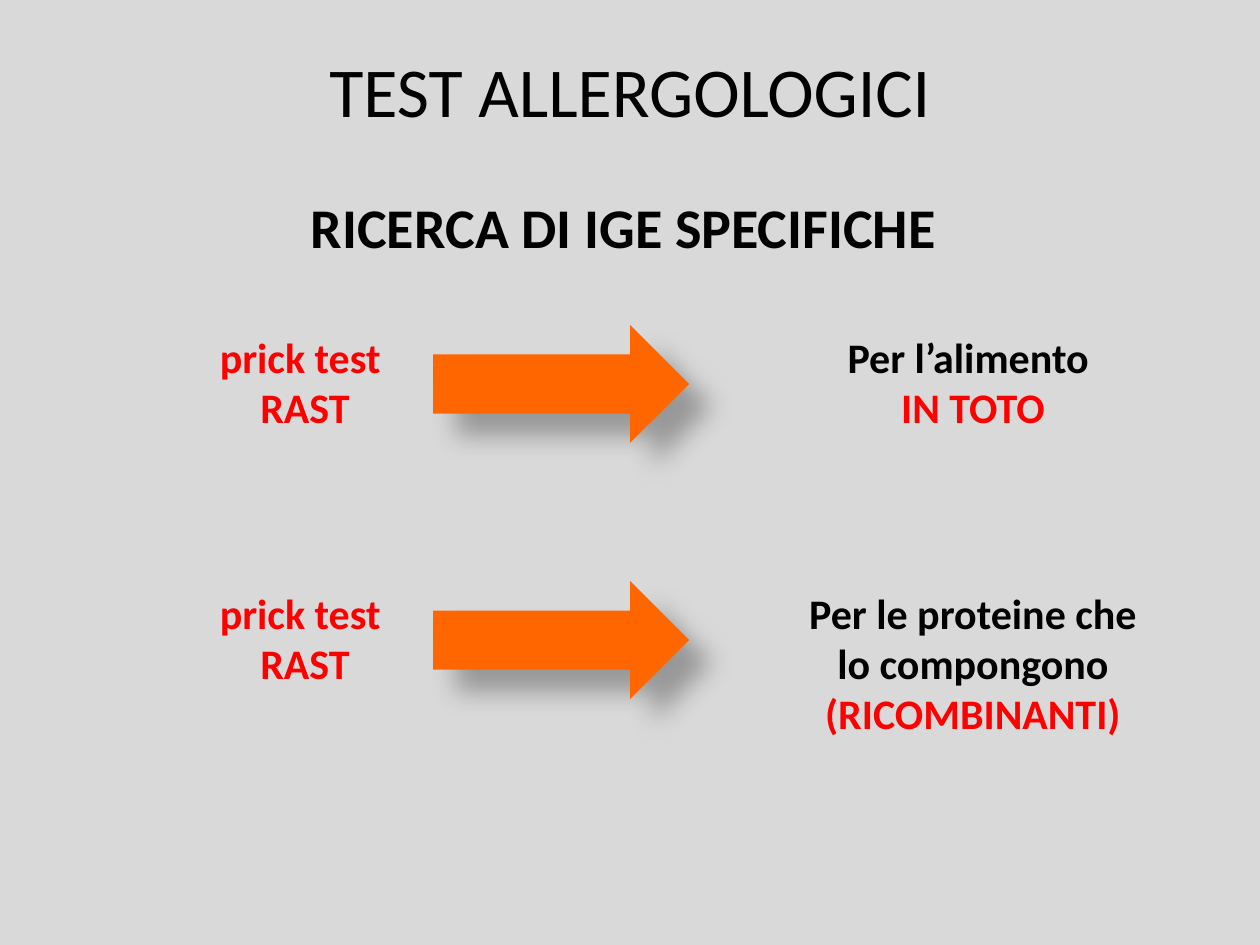
from dataclasses import dataclass

from lxml import etree
from pptx import Presentation
from pptx.dml.color import RGBColor
from pptx.enum import shapes, text
from pptx.oxml import ns
from pptx.util import Emu, Pt

PX = 914400 // 126


@dataclass(frozen=True)
class Theme:
    font: str = "Calibri"
    background: str = "D9D9D9"
    ink: str = "000000"
    accent: str = "FF0000"
    arrow: str = "FF6600"
    title_size: int = 40
    heading_size: int = 32
    body_size: int = 24


THEME = Theme()
ROW_TOP = 325
ROW_PITCH = 256
TESTS = [("prick test ", THEME.accent), ("RAST", THEME.accent)]
ROWS = [
    [("Per l’alimento ", THEME.ink), ("IN TOTO", THEME.accent)],
    [("Per le proteine che lo compongono", THEME.ink), ("(RICOMBINANTI)", THEME.accent)],
]


def px(*lengths):
    return [Emu(n * PX) for n in lengths]


def rgb(value):
    return RGBColor.from_string(value)


def add_text(slide, box, lines, size, bold=True, anchor=text.MSO_ANCHOR.TOP, before=0):
    tf = slide.shapes.add_textbox(*px(*box)).text_frame
    tf.word_wrap = True
    tf.vertical_anchor = anchor
    for i, (line, color) in enumerate(lines):
        p = tf.add_paragraph() if i else tf.paragraphs[0]
        p.text = line
        p.alignment = text.PP_ALIGN.CENTER
        p.space_before = Pt(before)
        p.font.name = THEME.font
        p.font.size = Pt(size)
        p.font.bold = bold
        p.font.color.rgb = rgb(color)


def add_shadow(sp):
    sp.shadow.inherit = False
    effects = sp._element.spPr.find(ns.qn("a:effectLst"))
    shadow = etree.SubElement(
        effects, ns.qn("a:outerShdw"), blurRad=str(Pt(15)), dist=str(Pt(18)),
        dir=str(45 * 60000), algn="ctr", rotWithShape="0")
    color = etree.SubElement(shadow, ns.qn("a:srgbClr"), val=THEME.ink)
    etree.SubElement(color, ns.qn("a:alpha"), val="30000")


def add_arrow(slide, box):
    sp = slide.shapes.add_shape(shapes.MSO_SHAPE.DOWN_ARROW, *px(*box))
    sp.rotation = 270
    sp.fill.solid()
    sp.fill.fore_color.rgb = rgb(THEME.arrow)
    sp.line.fill.background()
    add_shadow(sp)


def main():
    prs = Presentation()
    prs.slide_width, prs.slide_height = px(1260, 945)
    slide = prs.slides.add_slide(prs.slide_layouts[6])
    slide.background.fill.solid()
    slide.background.fill.fore_color.rgb = rgb(THEME.background)

    add_text(slide, (63, 10, 1134, 158), [("TEST ALLERGOLOGICI", THEME.ink)],
             THEME.title_size, bold=False, anchor=text.MSO_ANCHOR.MIDDLE)
    add_text(slide, (63, 186, 1134, 115), [("RICERCA DI IGE SPECIFICHE ", THEME.ink)],
             THEME.heading_size, before=2)
    for i, target in enumerate(ROWS):
        top = ROW_TOP + i * ROW_PITCH
        add_arrow(slide, (502, top - 69, 118, 256))
        add_text(slide, (118, top, 374, 217), TESTS, THEME.body_size)
        add_text(slide, (777, top, 392, 165), target, THEME.body_size)
    prs.save("out.pptx")


if __name__ == "__main__":
    main()
